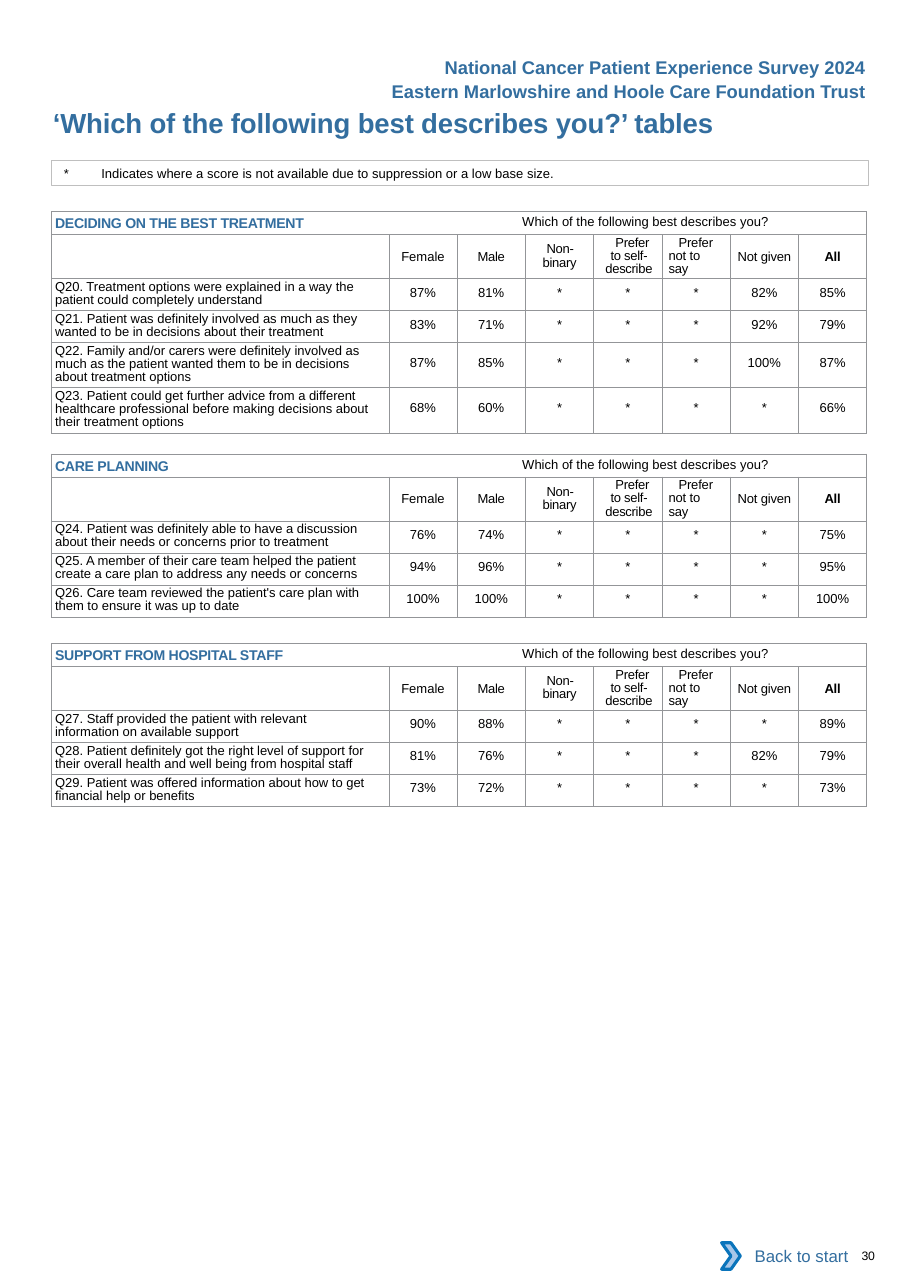
from pptx import Presentation
from pptx import util as u
from pptx.dml.color import RGBColor
from pptx.enum import shapes, text
from pptx.oxml import parse_xml
from pptx.oxml import ns

Inches, Pt = u.Inches, u.Pt
LEFT, CENTER, RIGHT = text.PP_ALIGN.LEFT, text.PP_ALIGN.CENTER, text.PP_ALIGN.RIGHT
BLUE, BLACK, GREY = "336E9F", "000000", "939598"


def rgb(value):
    return RGBColor.from_string(value)


def style(p, size=8.5, color=BLACK, bold=False, align=LEFT, spc=0, line=None, tab=None, **indents):
    p.alignment = align
    if line:
        p.line_spacing = Pt(line)
    pPr = p._p.get_or_add_pPr()
    for name, inches in indents.items():
        pPr.set(name, str(Inches(inches)))
    if tab:
        pPr.append(parse_xml(
            f'<a:tabLst {ns.nsdecls("a")}><a:tab pos="{Inches(tab)}" algn="l"/></a:tabLst>'))
    for r in p.runs:
        r.font.name = "Arial"
        r.font.size = Pt(size)
        r.font.bold = bold
        r.font.color.rgb = rgb(color)
        r._r.get_or_add_rPr().set("spc", str(round(spc * 100)))


prs = Presentation()
prs.slide_width, prs.slide_height = Inches(8.26), Inches(11.69)
s = prs.slides.add_slide(prs.slide_layouts[5])

title = s.shapes.title
title.left, title.top, title.width, title.height = map(Inches, (0.47, 0.96, 6.25, 0.3))
tf = title.text_frame
tf.text = "‘Which of the following best describes you?’ tables"
tf.margin_left = tf.margin_top = tf.margin_right = tf.margin_bottom = 0
tf.vertical_anchor = text.MSO_ANCHOR.TOP
tf.auto_size = text.MSO_AUTO_SIZE.NONE
style(tf.paragraphs[0], 18, BLUE, True, spc=-0.1, marL=0.01)

headers = [
    ("National Cancer Patient Experience Survey 2024", 3.92, 0.46, 4.04),
    ("Eastern Marlowshire and Hoole Care Foundation Trust", 3.29, 0.68, 4.67),
]
for words, left, top, width in headers:
    tf = s.shapes.add_textbox(Inches(left), Inches(top), Inches(width), Inches(0.3)).text_frame
    tf.text = words
    tf.word_wrap = False
    style(tf.paragraphs[0], 12, BLUE, True, RIGHT)

note = s.shapes.add_shape(shapes.MSO_SHAPE.RECTANGLE, Inches(0.47), Inches(1.46), Inches(7.41), Inches(0.22))
note.shadow.inherit = False
note.fill.background()
note.line.color.rgb = rgb("BFBFBF")
note.line.width = Pt(0.5)
tf = note.text_frame
tf.text = "*\tIndicates where a score is not available due to suppression or a low base size."
tf.margin_left = tf.margin_right = 0
tf.margin_top = tf.margin_bottom = Inches(0.04)
tf.vertical_anchor = text.MSO_ANCHOR.TOP
style(tf.paragraphs[0], tab=0.34, marL=0.11)

columns = [
    ("Female", {"align": CENTER}),
    ("Male", {"align": CENTER, "spc": -0.2}),
    ("Non- binary", {"align": CENTER, "spc": -0.2, "line": 8.6, "marL": 0.15, "marR": 0.15, "indent": 0.01}),
    ("Prefer to self- describe", {"align": CENTER, "spc": -0.2, "line": 8.6, "marL": 0.1, "marR": 0.08, "indent": 0.06}),
    ("Prefer not to say", {"spc": -0.1, "line": 8.6, "marL": 0.06, "marR": 0.1, "indent": 0.09}),
    ("Not given", {"align": CENTER, "spc": -0.1}),
    ("All", {"align": CENTER, "spc": -0.2, "bold": True}),
]
sections = [
    ("DECIDING ON THE BEST TREATMENT", 1.92, [
        ("Q20. Treatment options were explained in a way the patient could completely understand",
         "87% 81% * * * 82% 85%", 0.29),
        ("Q21. Patient was definitely involved as much as they wanted to be in decisions about their treatment",
         "83% 71% * * * 92% 79%", 0.29),
        ("Q22. Family and/or carers were definitely involved as much as the patient wanted them to be in "
         "decisions about treatment options", "87% 85% * * * 100% 87%", 0.41),
        ("Q23. Patient could get further advice from a different healthcare professional before making "
         "decisions about their treatment options", "68% 60% * * * * 66%", 0.41),
    ]),
    ("CARE PLANNING", 4.12, [
        ("Q24. Patient was definitely able to have a discussion about their needs or concerns prior to treatment",
         "76% 74% * * * * 75%", 0.29),
        ("Q25. A member of their care team helped the patient create a care plan to address any needs or concerns",
         "94% 96% * * * * 95%", 0.29),
        ("Q26. Care team reviewed the patient's care plan with them to ensure it was up to date",
         "100% 100% * * * * 100%", 0.29),
    ]),
    ("SUPPORT FROM HOSPITAL STAFF", 5.84, [
        ("Q27. Staff provided the patient with relevant information on available support",
         "90% 88% * * * * 89%", 0.29),
        ("Q28. Patient definitely got the right level of support for their overall health and well being "
         "from hospital staff", "81% 76% * * * 82% 79%", 0.29),
        ("Q29. Patient was offered information about how to get financial help or benefits",
         "73% 72% * * * * 73%", 0.29),
    ]),
]
for heading, top, questions in sections:
    heights = [0.21, 0.4] + [height for _, _, height in questions]
    table = s.shapes.add_table(len(heights), 8, Inches(0.47), Inches(top),
                               Inches(7.41), Inches(sum(heights))).table
    table.first_row = table.horz_banding = False
    for i, column in enumerate(table.columns):
        column.width = Inches(0.62 if i else 3.06)
    for row, height in zip(table.rows, heights):
        row.height = Inches(height)
    for cell in table.iter_cells():
        cell.margin_left = cell.margin_top = cell.margin_right = cell.margin_bottom = 0
        for side in "LRTB":
            cell._tc.get_or_add_tcPr().append(parse_xml(
                f'<a:ln{side} {ns.nsdecls("a")} w="{Pt(0.5)}"><a:solidFill>'
                f'<a:srgbClr val="{GREY}"/></a:solidFill></a:ln{side}>'))
        cell.fill.background()

    cell = table.cell(0, 0)
    cell.merge(table.cell(0, 7))
    cell.vertical_anchor = text.MSO_ANCHOR.MIDDLE
    p = cell.text_frame.paragraphs[0]
    p.text = heading + "\t"
    style(p, 15.8, BLUE, True, spc=-0.15, line=11.8, tab=4.24, marL=0.03)
    p.runs[0]._r.get_or_add_rPr().set("baseline", "-8000")
    r = p.add_run()
    r.text = "Which of the following best describes you?"
    r.font.name, r.font.size, r.font.color.rgb = "Arial", Pt(8.5), rgb(BLACK)

    for i, (label, look) in enumerate(columns, 1):
        cell = table.cell(1, i)
        cell.text = label
        cell.vertical_anchor = text.MSO_ANCHOR.MIDDLE
        style(cell.text_frame.paragraphs[0], **look)

    for j, (question, scores, height) in enumerate(questions, 2):
        cell = table.cell(j, 0)
        cell.text = question
        cell.margin_top, cell.margin_right = Inches(0.02), Inches(0.15)
        style(cell.text_frame.paragraphs[0], spc=-0.03, line=8.6, marL=0.03)
        for i, score in enumerate(scores.split(), 1):
            cell = table.cell(j, i)
            cell.text = score
            cell.margin_top = Inches(0.06 if height < 0.4 else 0.12)
            style(cell.text_frame.paragraphs[0], align=CENTER)

group = s.shapes.add_group_shape()
back = group.shapes.add_shape(shapes.MSO_SHAPE.RECTANGLE, Inches(6.62), Inches(11.19), Inches(1.18), Inches(0.42))
back.shadow.inherit = False
back.fill.solid()
back.fill.fore_color.rgb = rgb("FFFFFF")
back.line.fill.background()
back.text_frame.text = "Back to start"
style(back.text_frame.paragraphs[0], 11, BLUE, align=RIGHT)
arrow = group.shapes.add_shape(shapes.MSO_SHAPE.CHEVRON, Inches(6.55), Inches(11.28), Inches(0.17), Inches(0.24))
arrow.shadow.inherit = False
arrow.fill.solid()
arrow.fill.fore_color.rgb = rgb("A8C7E9")
arrow.line.color.rgb = rgb("0A74BB")
arrow.line.width = Pt(2)

tf = s.shapes.add_textbox(Inches(7.72), Inches(11.33), Inches(0.51), Inches(0.13)).text_frame
tf.text = "30"
tf.word_wrap = True
tf.margin_left = tf.margin_top = tf.margin_right = tf.margin_bottom = 0
style(tf.paragraphs[0], 8, spc=-0.2, marL=0.1)

prs.save("out.pptx")
